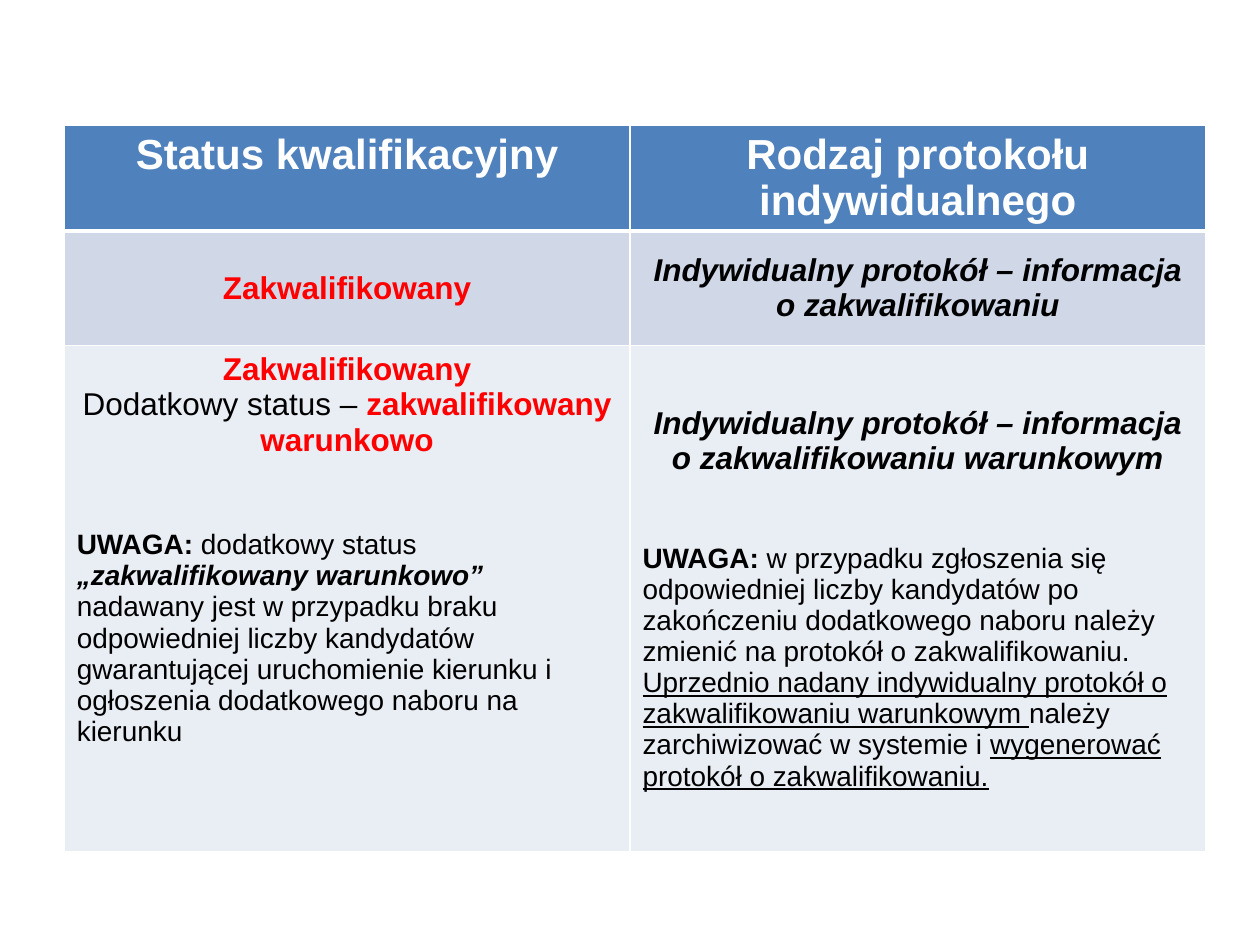
import pptx
import pptx.dml.color
import pptx.enum.text
import pptx.oxml
import pptx.oxml.ns
import pptx.util

Inches = pptx.util.Inches
Pt = pptx.util.Pt
ALIGN = pptx.enum.text.PP_ALIGN
ANCHOR = pptx.enum.text.MSO_ANCHOR

WHITE, BLACK, RED = "FFFFFF", "000000", "FF0000"
ROW_FILLS = ["4F81BD", "D0D8E8", "E9EDF4"]
COLUMN_WIDTHS = [4.49, 4.57]
ROW_HEIGHTS = [0.81, 0.91, 4.02]


def colour(value):
    return pptx.dml.color.RGBColor.from_string(value)


def add_spans(para, spans, size):
    for text, shade, style in spans:
        span = para.add_run()
        span.text = text
        font = span.font
        font.name = "Arial"
        font.size = Pt(size)
        font.color.rgb = colour(shade)
        font.bold = "b" in style
        font.italic = "i" in style
        font.underline = "u" in style


def fill_cell(cell, paragraphs):
    frame = cell.text_frame
    for index, (size, align, gap, spans) in enumerate(paragraphs):
        para = frame.add_paragraph() if index else frame.paragraphs[0]
        para.alignment = align
        para.space_before = Pt(gap)
        add_spans(para, spans, size)


def set_borders(cell, bottom_width):
    properties = cell._tc.get_or_add_tcPr()
    widths = {"lnL": 1, "lnR": 1, "lnT": 1, "lnB": bottom_width}
    for position, (side, width) in enumerate(widths.items()):
        line = pptx.oxml.parse_xml(
            f'<a:{side} {pptx.oxml.ns.nsdecls("a")} w="{Pt(width)}">'
            f'<a:solidFill><a:srgbClr val="{WHITE}"/></a:solidFill></a:{side}>'
        )
        properties.insert(position, line)


def heading(text):
    return [(24, ALIGN.CENTER, 0, [(text, WHITE, "b")])]


def status(text, shade, style):
    return (18, ALIGN.CENTER, 0, [(text, shade, style)])


def note(gap, *spans):
    return (16, ALIGN.LEFT, gap, [(text, BLACK, style) for text, style in spans])


def add_status_table(page, left, top, rows):
    frame = page.shapes.add_table(
        len(rows), len(COLUMN_WIDTHS), Inches(left), Inches(top),
        Inches(sum(COLUMN_WIDTHS)), Inches(sum(ROW_HEIGHTS)),
    )
    table = frame.table
    for column, width in zip(table.columns, COLUMN_WIDTHS):
        column.width = Inches(width)
    for row, height in zip(table.rows, ROW_HEIGHTS):
        row.height = Inches(height)
    for row_index, contents in enumerate(rows):
        for column_index, (anchor, paragraphs) in enumerate(contents):
            cell = table.cell(row_index, column_index)
            cell.vertical_anchor = anchor
            cell.fill.solid()
            cell.fill.fore_color.rgb = colour(ROW_FILLS[row_index])
            set_borders(cell, 1 if row_index else 3)
            fill_cell(cell, paragraphs)


def main():
    deck = pptx.Presentation()
    deck.slide_width, deck.slide_height = Inches(10), Inches(7.5)
    page = deck.slides.add_slide(deck.slide_layouts[6])

    qualified = status("Zakwalifikowany", RED, "b")
    conditional = [
        qualified,
        (18, ALIGN.CENTER, 0, [
            ("Dodatkowy status – ", BLACK, ""),
            ("zakwalifikowany warunkowo", RED, "b"),
        ]),
        note(
            41,
            ("UWAGA: ", "b"),
            ("dodatkowy status ", ""),
            ("„zakwalifikowany warunkowo”", "bi"),
            (" nadawany jest w przypadku braku odpowiedniej liczby kandydatów "
             "gwarantującej uruchomienie kierunku i ogłoszenia dodatkowego "
             "naboru na kierunku", ""),
        ),
    ]
    conditional_protocol = [
        status("Indywidualny protokół – informacja o zakwalifikowaniu warunkowym",
               BLACK, "bi"),
        note(
            38,
            ("UWAGA: ", "b"),
            ("w przypadku zgłoszenia się odpowiedniej liczby kandydatów po "
             "zakończeniu dodatkowego naboru należy zmienić na protokół o "
             "zakwalifikowaniu.", ""),
        ),
        note(
            0,
            ("Uprzednio nadany indywidualny protokół o zakwalifikowaniu "
             "warunkowym ", "u"),
            ("należy zarchiwizować w systemie i ", ""),
            ("wygenerować protokół o zakwalifikowaniu.", "u"),
        ),
    ]
    protocol = status("Indywidualny protokół – informacja o zakwalifikowaniu",
                      BLACK, "bi")
    add_status_table(page, 0.51, 0.99, [
        [(ANCHOR.TOP, heading("Status kwalifikacyjny")),
         (ANCHOR.TOP, heading("Rodzaj protokołu indywidualnego"))],
        [(ANCHOR.MIDDLE, [qualified]), (ANCHOR.MIDDLE, [protocol])],
        [(ANCHOR.TOP, conditional), (ANCHOR.MIDDLE, conditional_protocol)],
    ])
    deck.save("out.pptx")


if __name__ == "__main__":
    main()
